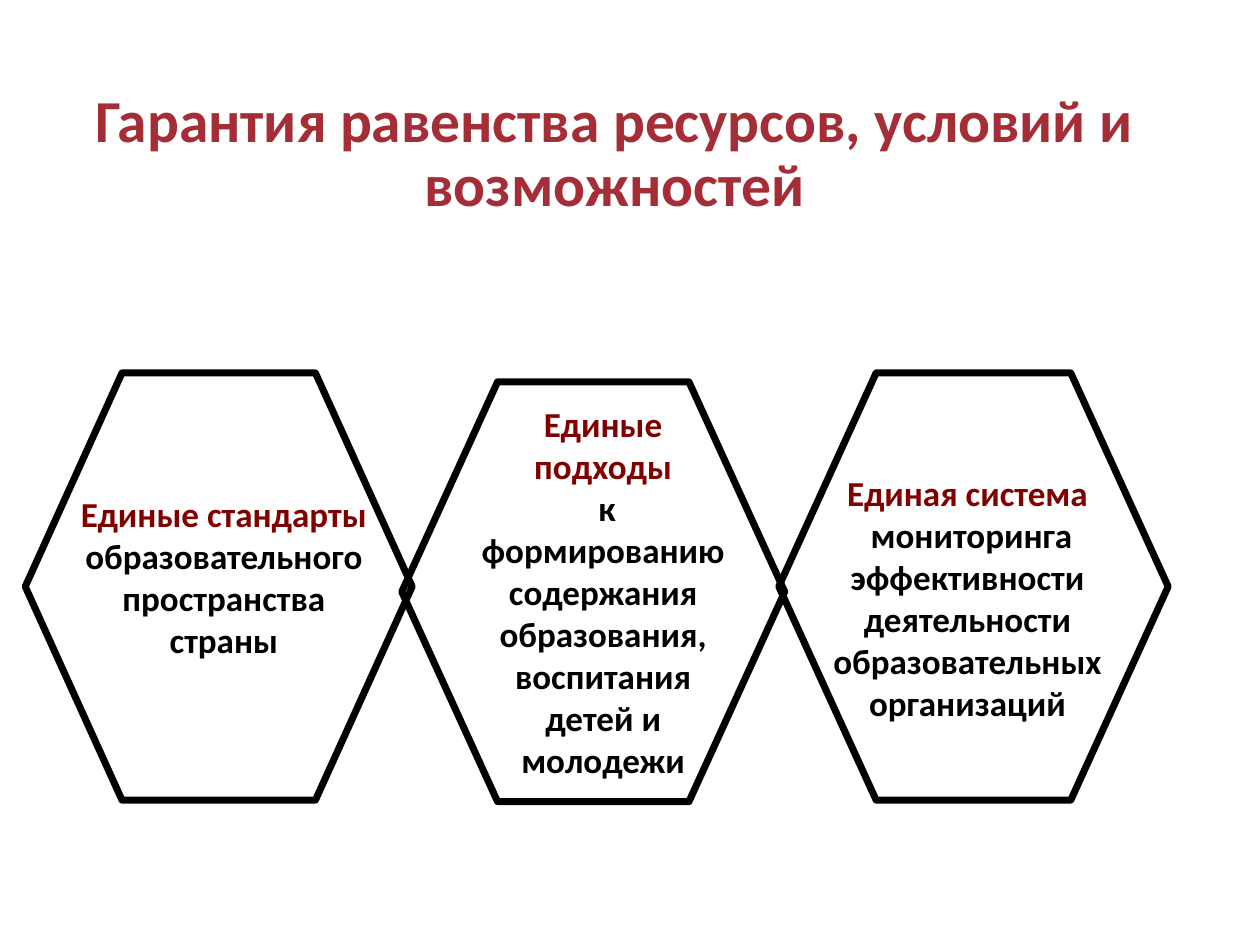
"""Build a slide with three linked hexagons on equal resources in education."""
from lxml import etree
from pptx import Presentation
from pptx import util as u
from pptx.dml.color import RGBColor
from pptx.enum import shapes, text
from pptx.oxml.ns import qn

COLORS = {"title": "A52D36", "accent": "800000", "ink": "000000"}
TITLE = "Гарантия равенства ресурсов, условий и возможностей"
TITLE_BOX = (1.02, 1.7, 22.73, 2.87)
TITLE_FONT = {"name": "Calibri", "size": u.Pt(34), "bold": True}
BODY_FONT = {"name": "Calibri", "size": u.Pt(20), "bold": True}
GUARANTEES = [
    {
        "hexagon": (0.51, 7.52, 7.8, 8.61),
        "label": (1.3, 9.78, 6.43, 3.68),
        "paragraphs": [[("Единые стандарты ", "accent"),
                        ("образовательного пространства страны", "ink")]],
    },
    {
        "hexagon": (8.1, 7.7, 7.72, 8.46),
        "label": (9.3, 7.95, 5.72, 7.95),
        "paragraphs": [[("Единые подходы", "accent")],
                       [(" к формированию содержания образования, "
                         "воспитания детей и молодежи", "ink")]],
    },
    {
        "hexagon": (15.7, 7.52, 7.85, 8.61),
        "label": (16.18, 9.35, 6.65, 5.38),
        "paragraphs": [[("Единая система", "accent")],
                       [(" мониторинга эффективности деятельности "
                         "образовательных организаций", "ink")]],
    },
]


def to_cm(box):
    return [u.Cm(value) for value in box]


def apply(target, values):
    for name, value in values.items():
        setattr(target, name, value)


def write(frame, paragraphs, font, anchor, spacing=1.0):
    apply(frame, {"word_wrap": True, "vertical_anchor": anchor,
                  "auto_size": text.MSO_AUTO_SIZE.SHAPE_TO_FIT_TEXT})
    for index, runs in enumerate(paragraphs):
        paragraph = frame.add_paragraph() if index else frame.paragraphs[0]
        apply(paragraph, {"alignment": text.PP_ALIGN.CENTER,
                          "line_spacing": spacing, "space_before": u.Pt(0)})
        for words, color in runs:
            run = paragraph.add_run()
            run.text = words
            apply(run.font, font)
            run.font.color.rgb = RGBColor.from_string(COLORS[color])


def add_hexagon(slide, box):
    hexagon = slide.shapes.add_shape(shapes.MSO_SHAPE.HEXAGON, *to_cm(box))
    hexagon.shadow.inherit = False
    hexagon.fill.background()
    hexagon.line.color.rgb = RGBColor.from_string(COLORS["ink"])
    hexagon.line.width = u.Pt(4)
    etree.SubElement(hexagon.line._get_or_add_ln(), qn("a:round"))


def main():
    presentation = Presentation()
    apply(presentation, {"slide_width": u.Cm(25.4), "slide_height": u.Cm(19.05)})
    slide = presentation.slides.add_slide(presentation.slide_layouts[5])

    title = slide.shapes.title
    apply(title, dict(zip(("left", "top", "width", "height"), to_cm(TITLE_BOX))))
    write(title.text_frame, [[(TITLE, "title")]], TITLE_FONT,
          text.MSO_ANCHOR.TOP, 0.9)

    for guarantee in GUARANTEES:
        add_hexagon(slide, guarantee["hexagon"])
    for guarantee in GUARANTEES:
        label = slide.shapes.add_textbox(*to_cm(guarantee["label"]))
        write(label.text_frame, guarantee["paragraphs"], BODY_FONT,
              text.MSO_ANCHOR.MIDDLE)

    presentation.save("out.pptx")


if __name__ == "__main__":
    main()
